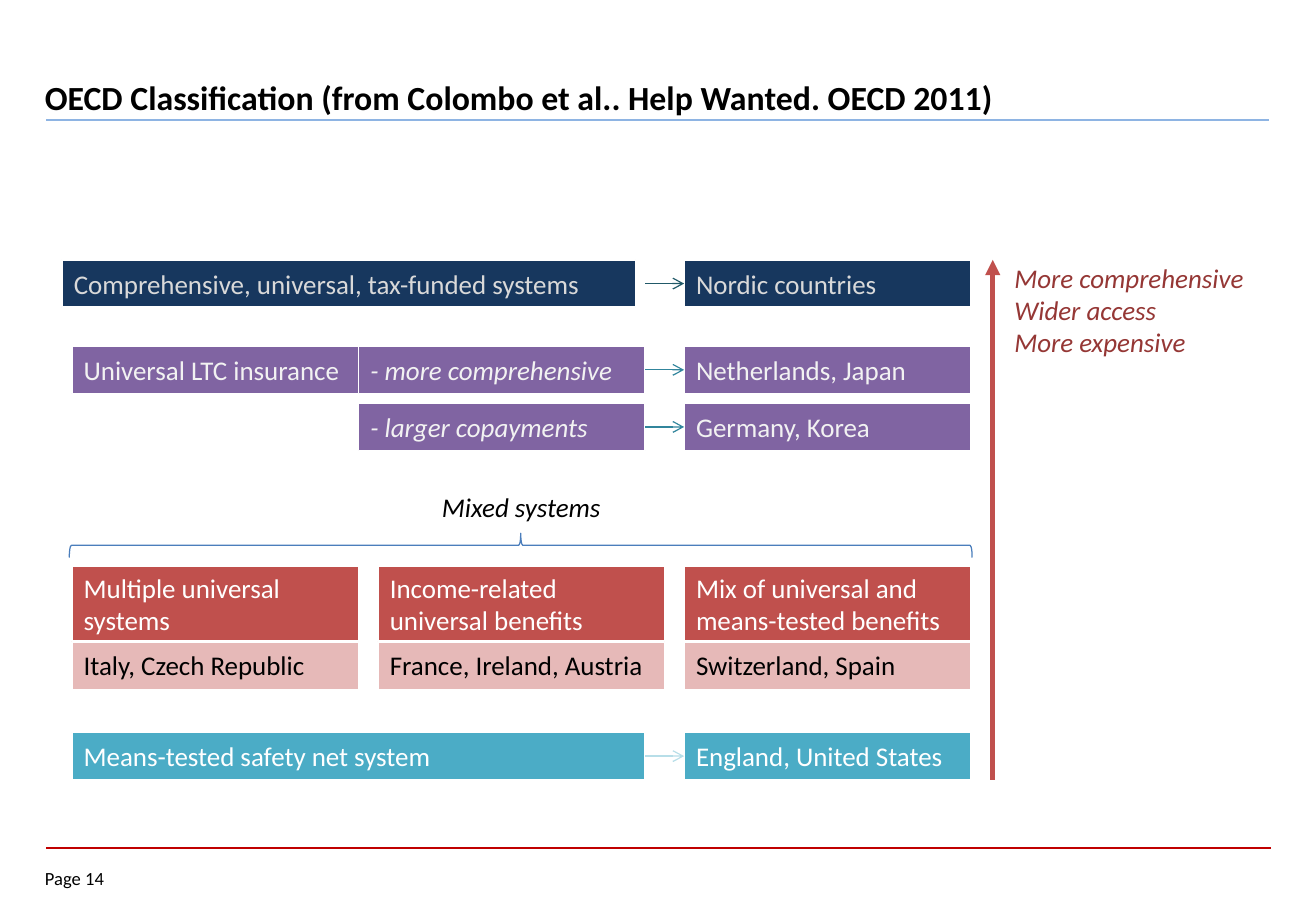
from dataclasses import dataclass

from lxml.etree import SubElement
from pptx import Presentation
from pptx.dml.color import RGBColor
from pptx.enum.shapes import MSO_CONNECTOR as Connector, MSO_SHAPE as Shape
from pptx.enum.text import MSO_ANCHOR as Anchor, PP_ALIGN as Align
from pptx.oxml.ns import qn
from pptx.util import Inches, Pt


@dataclass(frozen=True)
class Theme:
    """Colours and type sizes of the slide."""
    font: str = "Calibri"
    title_size: int = 20
    body_size: int = 16
    footer_size: int = 11
    black: str = "000000"
    white: str = "FFFFFF"
    navy: str = "17375E"
    navy_text: str = "D9D9D9"
    purple: str = "8064A2"
    purple_text: str = "F2F2F2"
    red: str = "C0504D"
    pink: str = "E6B9B8"
    dark_red: str = "953735"
    aqua: str = "4BACC6"
    title_rule: str = "8EB4E3"
    footer_rule: str = "C00000"
    brace: str = "4B7EBC"
    navy_arrow: str = "215968"
    purple_arrow: str = "31859C"
    aqua_arrow: str = "B7DEE8"


@dataclass(frozen=True)
class Grid:
    """Columns and rows that carry the boxes, in inches."""
    left: float = 0.59
    pitch: float = 2.52
    column: float = 2.36
    row: float = 0.39
    tall_row: float = 0.62
    comprehensive: float = 2.14
    insurance: float = 2.85
    copayment: float = 3.32
    mixed_label: float = 3.99
    brace: float = 4.39
    mixed: float = 4.66
    mixed_countries: float = 5.29
    safety_net: float = 6.03

    def x(self, index):
        """Return the left edge of a column."""
        return self.left + index * self.pitch

    @property
    def width(self):
        """Return the width of all three columns."""
        return 2 * self.pitch + self.column


THEME = Theme()
GRID = Grid()


def color(value):
    """Turn a hex string into a colour."""
    return RGBColor.from_string(value)


def write(shape, text, text_color, size=THEME.body_size, bold=False,
          italic=False, align=Align.LEFT, anchor=Anchor.TOP, wrap=True):
    """Fill a shape with text in one style."""
    frame = shape.text_frame
    frame.text = text
    frame.word_wrap = wrap
    frame.vertical_anchor = anchor
    for paragraph in frame.paragraphs:
        paragraph.alignment = align
        for run in paragraph.runs:
            run.font.name = THEME.font
            run.font.size = Pt(size)
            run.font.bold = bold
            run.font.italic = italic
            run.font.color.rgb = color(text_color)


def add_text(slide, bounds, text, text_color=THEME.black, **style):
    """Add a text box."""
    shape = slide.shapes.add_textbox(*map(Inches, bounds))
    write(shape, text, text_color, **style)
    return shape


def add_box(slide, x, y, text, fill, text_color, width=GRID.column,
            height=GRID.row, italic=False, anchor=Anchor.MIDDLE):
    """Add a filled box with a white outline."""
    shape = slide.shapes.add_shape(
        Shape.RECTANGLE, *map(Inches, (x, y, width, height)))
    shape.shadow.inherit = False
    shape.fill.solid()
    shape.fill.fore_color.rgb = color(fill)
    shape.line.color.rgb = color(THEME.white)
    shape.line.width = Pt(1)
    write(shape, text, text_color, italic=italic, anchor=anchor)
    return shape


def add_line(slide, start, end, line_color, width, head=None):
    """Add a straight line, with an arrowhead at its end if named."""
    line = slide.shapes.add_connector(
        Connector.STRAIGHT, *map(Inches, (*start, *end)))
    line.line.color.rgb = color(line_color)
    line.line.width = Pt(width)
    if head:
        SubElement(line.line._get_or_add_ln(), qn("a:tailEnd"), type=head)
    SubElement(line._element.spPr, qn("a:effectLst"))
    return line


def add_pair(slide, x, y, system, countries, fill, text_color, arrow_color,
             joined=True, **style):
    """Add a system box, its countries and the arrow between them."""
    source = add_box(slide, x, y, system, fill, text_color, **style)
    target = add_box(slide, GRID.x(2), y, countries, fill, text_color)
    middle = y + GRID.row / 2
    arrow = add_line(slide, (GRID.left + 2 * GRID.column, middle),
                     (GRID.x(2), middle), arrow_color, 0.75, "arrow")
    if joined:
        arrow.begin_connect(source, 3)
    arrow.end_connect(target, 1)


def add_brace(slide, x, y, width, height):
    """Add a horizontal brace that points up."""
    center_x, center_y = x + width / 2, y + height / 2
    brace = slide.shapes.add_shape(Shape.LEFT_BRACE, *map(Inches, (
        center_x - height / 2, center_y - width / 2, height, width)))
    brace.rotation = 90
    brace.shadow.inherit = False
    brace.fill.background()
    brace.line.color.rgb = color(THEME.brace)
    brace.line.width = Pt(0.75)


def add_frame(slide):
    """Add the title, the rules and the page number."""
    add_line(slide, (0.38, 6.98), (10.46, 6.98), THEME.footer_rule, 1)
    add_line(slide, (0.38, 0.99), (10.44, 0.99), THEME.title_rule, 1.5)
    footer = add_text(slide, (0.37, 7.14, 0.73, 0.22), "Page 14",
                      size=THEME.footer_size).text_frame
    footer.margin_left = footer.margin_right = 0
    footer.margin_top = footer.margin_bottom = 0
    add_text(slide, (0.27, 0.44, 9.92, 0.71),
             "OECD Classification (from Colombo et al.. Help Wanted. OECD 2011)",
             size=THEME.title_size, bold=True, anchor=Anchor.MIDDLE)


def add_single_systems(slide):
    """Add the rows that hold one system each."""
    wide = 2 * GRID.column
    second = GRID.left + GRID.column
    purple = (THEME.purple, THEME.purple_text)
    add_pair(slide, 0.51, GRID.comprehensive,
             "Comprehensive, universal, tax-funded systems", "Nordic countries",
             THEME.navy, THEME.navy_text, THEME.navy_arrow, joined=False, width=wide)
    add_box(slide, GRID.left, GRID.insurance, "Universal LTC insurance", *purple)
    for y, system, countries in (
            (GRID.insurance, "- more comprehensive", "Netherlands, Japan"),
            (GRID.copayment, "- larger copayments", "Germany, Korea")):
        add_pair(slide, second, y, system, countries, *purple,
                 THEME.purple_arrow, italic=True)
    add_pair(slide, GRID.left, GRID.safety_net, "Means-tested safety net system",
             "England, United States", THEME.aqua, THEME.white,
             THEME.aqua_arrow, width=wide)


def add_mixed_systems(slide):
    """Add the three mixed systems under their brace."""
    add_text(slide, (GRID.left, GRID.mixed_label, GRID.width, GRID.row),
             "Mixed systems", italic=True, align=Align.CENTER)
    add_brace(slide, GRID.left - 0.02, GRID.brace, GRID.width + 0.03, 0.2)
    for index, (system, countries) in enumerate((
            ("Multiple universal systems", "Italy, Czech Republic"),
            ("Income-related universal benefits", "France, Ireland, Austria"),
            ("Mix of universal and means-tested benefits", "Switzerland, Spain"))):
        add_box(slide, GRID.x(index), GRID.mixed, system, THEME.red, THEME.white,
                height=GRID.tall_row)
        add_box(slide, GRID.x(index), GRID.mixed_countries, countries,
                THEME.pink, THEME.black, anchor=Anchor.TOP)


def add_scale(slide):
    """Add the upward arrow and its label."""
    add_line(slide, (8.17, GRID.safety_net + GRID.row), (8.17, GRID.comprehensive),
             THEME.red, 3, "triangle")
    add_text(slide, (8.25, 2.1, 2.14, 0.91),
             "More comprehensive\nWider access\nMore expensive",
             THEME.dark_red, italic=True, wrap=False)


def main():
    """Build and save the slide."""
    presentation = Presentation()
    presentation.slide_width = Inches(10.83)
    presentation.slide_height = Inches(7.5)
    slide = presentation.slides.add_slide(presentation.slide_layouts[6])
    for add_part in (add_frame, add_single_systems, add_mixed_systems, add_scale):
        add_part(slide)
    presentation.save("out.pptx")


if __name__ == "__main__":
    main()
